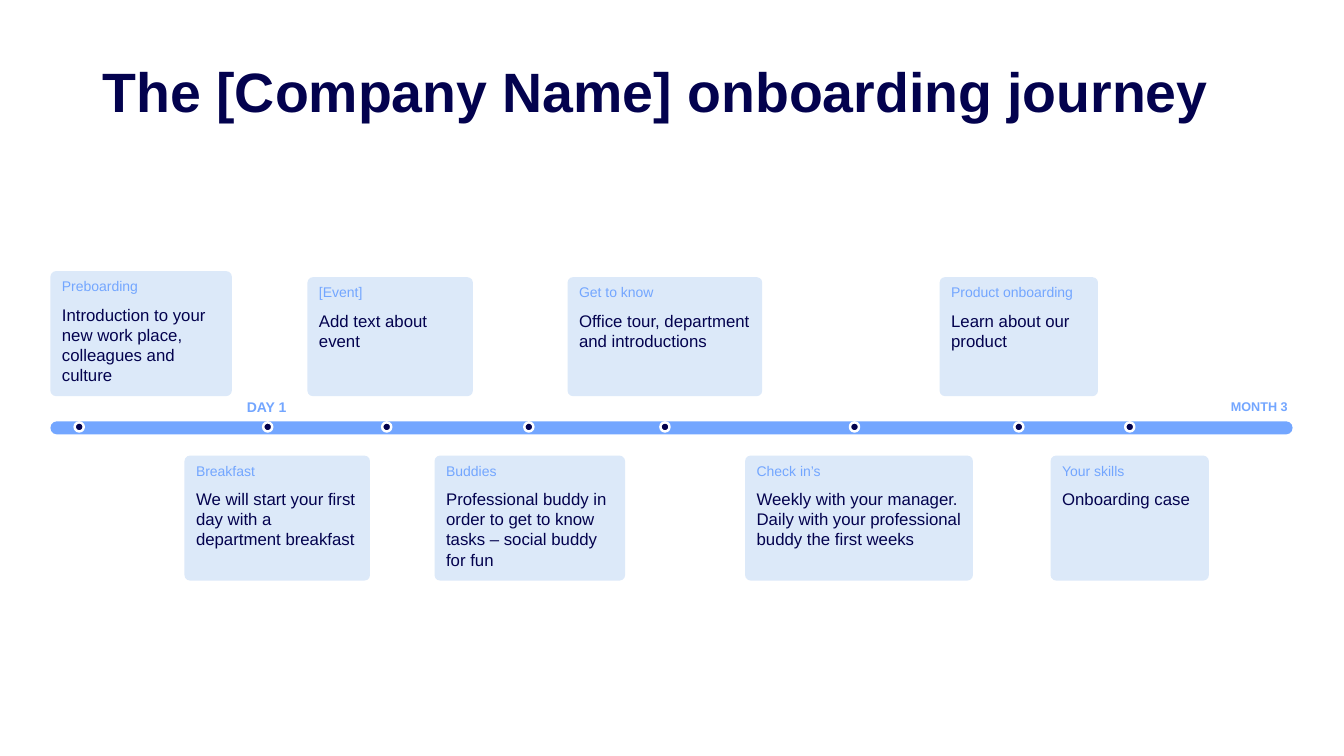
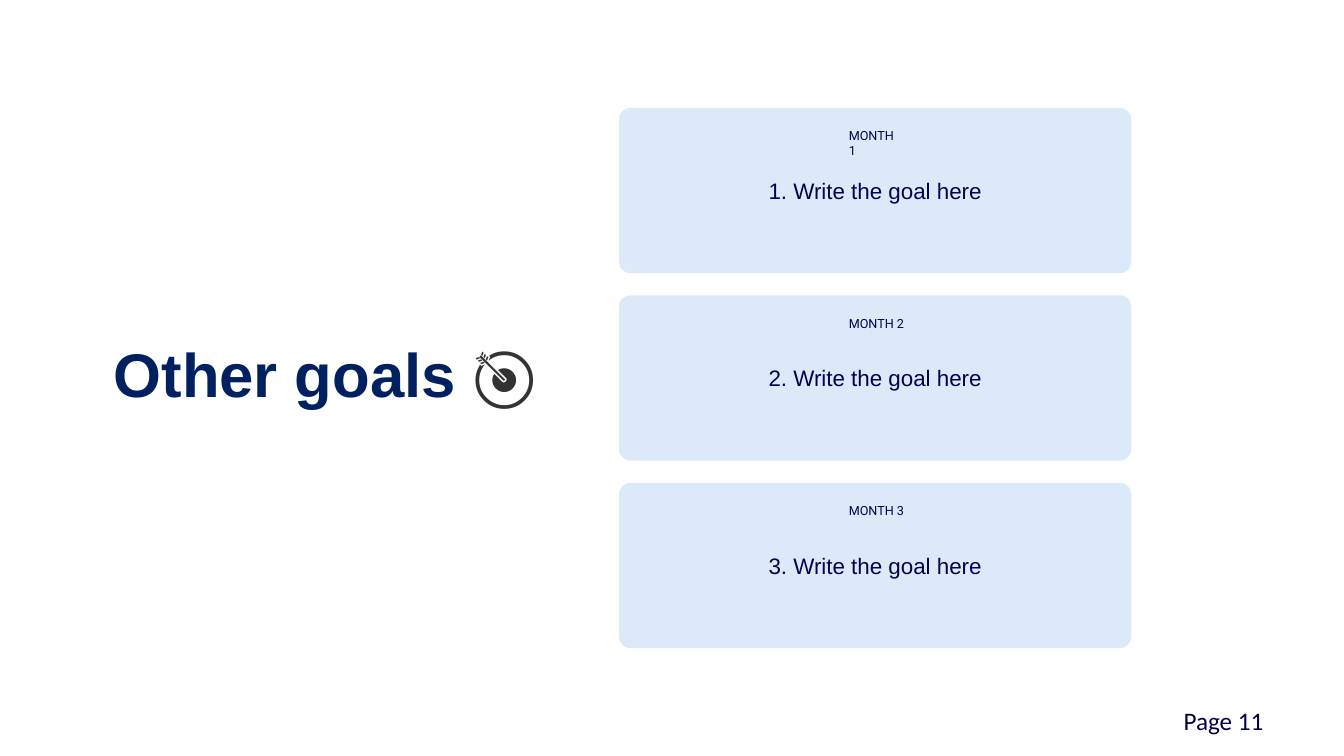
from dataclasses import dataclass

import pptx
import pptx.dml.color
import pptx.enum.shapes
import pptx.enum.text
import pptx.presentation
import pptx.shapes.autoshape
import pptx.slide
import pptx.text.text
import pptx.util

Inches = pptx.util.Inches
Pt = pptx.util.Pt
Shape = pptx.shapes.autoshape.Shape
Slide = pptx.slide.Slide
MSO_SHAPE = pptx.enum.shapes.MSO_SHAPE
ANCHOR = pptx.enum.text.MSO_ANCHOR
ALIGN = pptx.enum.text.PP_ALIGN

NAVY, TITLE_BLUE, BLUE = "03024E", "002060", "73A6FF"
PALE, WHITE, GRAY = "DCE9F9", "FFFFFF", "333333"


@dataclass(frozen=True)
class Box:
    left: float
    top: float
    width: float
    height: float


@dataclass(frozen=True)
class Style:
    size: float
    color: str = NAVY
    font: str = "Arial"
    bold: bool = False


@dataclass(frozen=True)
class Event:
    left: float
    width: float
    heading: str
    body: str
    top: float = 2.75
    height: float = 1.18


@dataclass(frozen=True)
class Goal:
    month: str
    text: str
    label_width: float = 0.8


LOWER = {"top": 4.52, "height": 1.24}
EVENTS = [
    Event(0.5, 1.8, "Preboarding",
          "Introduction to your new work place, colleagues and culture",
          top=2.69, height=1.24),
    Event(1.83, 1.84, "Breakfast",
          "We will start your first day with a department breakfast", **LOWER),
    Event(3.05, 1.64, "[Event]", "Add text about event"),
    Event(4.31, 1.89, "Buddies",
          "Professional buddy in order to get to know tasks – social buddy for fun",
          **LOWER),
    Event(5.63, 1.93, "Get to know", "Office tour, department and introductions"),
    Event(7.39, 2.26, "Check in’s",
          "Weekly with your manager.\nDaily with your professional buddy the first weeks",
          **LOWER),
    Event(9.32, 1.57, "Product onboarding", "Learn about our product"),
    Event(10.42, 1.57, "Your skills", "Onboarding case", **LOWER),
]
DOT_LEFTS = [0.74, 2.61, 3.79, 5.2, 6.55, 8.43, 10.06, 11.16]
GOALS = [
    Goal("MONTH 1", "1. Write the goal here", label_width=0.72),
    Goal("MONTH 2", "2. Write the goal here"),
    Goal("MONTH 3", "3. Write the goal here"),
]


def rgb(color: str) -> pptx.dml.color.RGBColor:
    return pptx.dml.color.RGBColor.from_string(color)


def format_run(r: pptx.text.text._Run, style: Style) -> None:
    r.font.size = Pt(style.size)
    r.font.name = style.font
    r.font.bold = style.bold
    r.font.color.rgb = rgb(style.color)


def set_text(p: pptx.text.text._Paragraph, text: str, style: Style) -> None:
    p.text = text
    for r in p.runs:
        format_run(r, style)


def add_text(s: Slide, box: Box, text: str, style: Style) -> Shape:
    sp = s.shapes.add_textbox(Inches(box.left), Inches(box.top),
                              Inches(box.width), Inches(box.height))
    sp.text_frame.word_wrap = True
    set_text(sp.text_frame.paragraphs[0], text, style)
    return sp


def add_title(s: Slide, box: Box, text: str, style: Style) -> Shape:
    sp = add_text(s, box, text, style)
    sp.text_frame.vertical_anchor = ANCHOR.MIDDLE
    sp.text_frame.paragraphs[0].line_spacing = 0.9
    return sp


def add_shape(s: Slide, kind: MSO_SHAPE, box: Box, fill: str) -> Shape:
    sp = s.shapes.add_shape(kind, Inches(box.left), Inches(box.top),
                            Inches(box.width), Inches(box.height))
    sp.shadow.inherit = False
    sp.fill.solid()
    sp.fill.fore_color.rgb = rgb(fill)
    sp.line.fill.background()
    return sp


def add_rounded(s: Slide, box: Box, fill: str, corner: float) -> Shape:
    sp = add_shape(s, MSO_SHAPE.ROUNDED_RECTANGLE, box, fill)
    sp.adjustments[0] = corner
    return sp


def add_event(s: Slide, event: Event) -> None:
    box = Box(event.left, event.top, event.width, event.height)
    tf = add_rounded(s, box, PALE, 0.045).text_frame
    tf.word_wrap = True
    tf.vertical_anchor = ANCHOR.TOP
    heading, body = tf.paragraphs[0], tf.add_paragraph()
    set_text(heading, event.heading, Style(10, BLUE))
    set_text(body, event.body, Style(12))
    body.space_before = Pt(7)
    for p in tf.paragraphs:
        p.alignment = ALIGN.LEFT


def add_dot(s: Slide, left: float) -> None:
    sp = add_shape(s, MSO_SHAPE.OVAL, Box(left, 4.19, 0.09, 0.09), NAVY)
    sp.line.color.rgb = rgb(WHITE)
    sp.line.width = Pt(1.75)


def add_goal(s: Slide, goal: Goal, top: float) -> None:
    tf = add_rounded(s, Box(6.14, top, 5.08, 1.64), PALE, 0.07).text_frame
    tf.vertical_anchor = ANCHOR.MIDDLE
    set_text(tf.paragraphs[0], goal.text, Style(16))
    tf.paragraphs[0].alignment = ALIGN.CENTER
    add_text(s, Box(8.32, top + 0.15, goal.label_width, 0.25), goal.month,
             Style(9, font="Roboto"))


def add_slide(prs: pptx.presentation.Presentation) -> Slide:
    return prs.slides.add_slide(prs.slide_layouts[6])


def build_journey(prs: pptx.presentation.Presentation) -> None:
    s = add_slide(prs)
    add_title(s, Box(0.92, 0.62, 11.5, 0.63),
              "The [Company Name] onboarding journey", Style(39.6, bold=True))
    add_rounded(s, Box(0.5, 4.18, 12.32, 0.13), BLUE, 0.5)
    for left in DOT_LEFTS:
        add_dot(s, left)
    for event in EVENTS:
        add_event(s, event)
    add_text(s, Box(2.35, 3.9, 0.7, 0.27), "DAY 1", Style(10, BLUE, bold=True))
    add_text(s, Box(12.11, 3.91, 0.85, 0.25), "MONTH 3", Style(9, BLUE, bold=True))


def build_goals(prs: pptx.presentation.Presentation) -> None:
    s = add_slide(prs)
    title = add_title(s, Box(1.03, 2.71, 4.73, 2.07), "Other goals ",
                      Style(44, TITLE_BLUE, bold=True))
    r = title.text_frame.paragraphs[0].add_run()
    r.text = "🎯"
    format_run(r, Style(44, GRAY, "Cabin"))
    for i, goal in enumerate(GOALS):
        add_goal(s, goal, 1.07 + i * 1.86)
    add_text(s, Box(11.64, 6.95, 1.18, 0.4), "Page 11", Style(18, font="Calibri"))


def main() -> None:
    prs = pptx.Presentation()
    prs.slide_width, prs.slide_height = Inches(13.33), Inches(7.5)
    build_journey(prs)
    build_goals(prs)
    prs.save("out.pptx")


if __name__ == "__main__":
    main()
